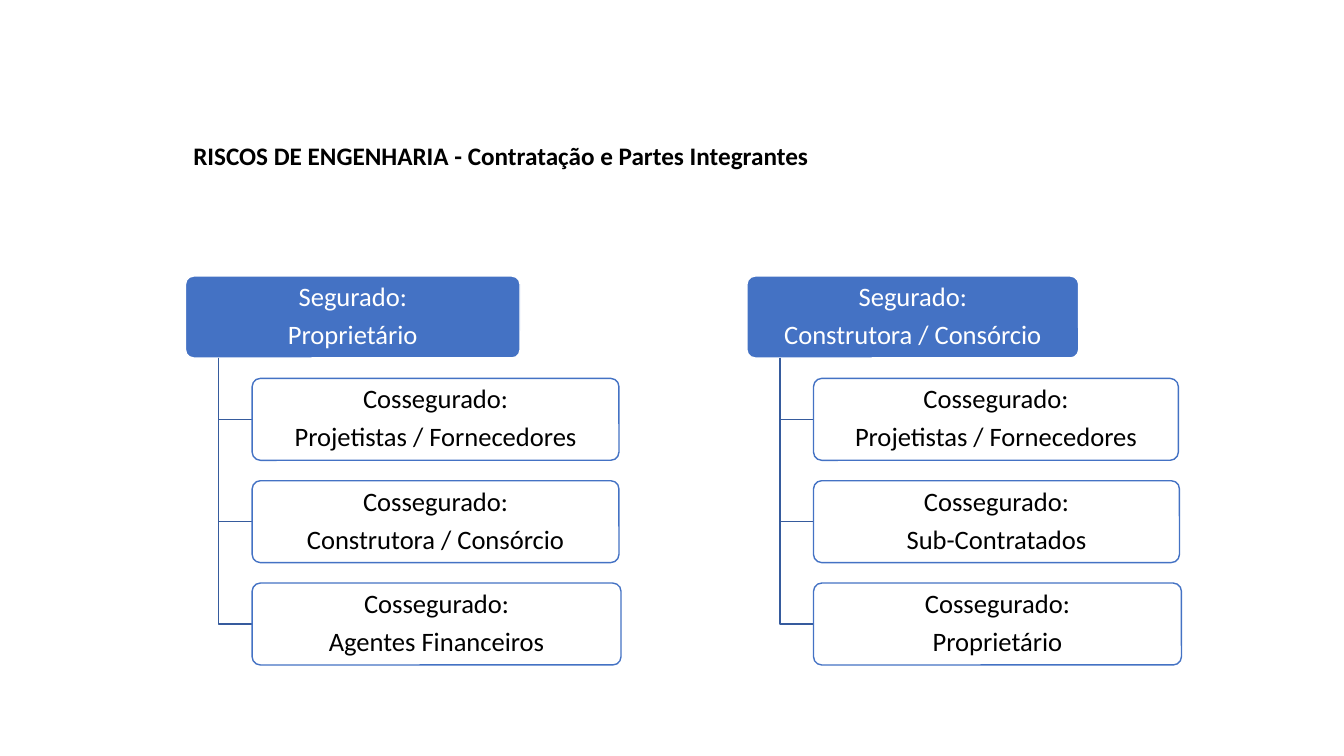
import pptx
import pptx.dml.color
import pptx.enum.shapes
import pptx.enum.text
import pptx.util

Pt = pptx.util.Pt
ALIGN = pptx.enum.text.PP_ALIGN
COLORS = {"black": "000000", "white": "FFFFFF", "blue": "4472C4", "navy": "365B9D"}
BOX_HEIGHT = 58.5
ROW_STEP = 73.1
INDENT = 23.8
TREE_TOP = 197.2

TREES = [
    (533.5, [
        (237, "Segurado:", "Construtora / Consórcio"),
        (260.6, "Cossegurado:", "Projetistas / Fornecedores"),
        (261.4, "Cossegurado:", "Sub-Contratados"),
        (262.8, "Cossegurado:", "Proprietário"),
    ]),
    (132.5, [
        (239, "Segurado:", "Proprietário"),
        (262, "Cossegurado:", "Projetistas / Fornecedores"),
        (262, "Cossegurado:", "Construtora / Consórcio"),
        (263.5, "Cossegurado:", "Agentes Financeiros"),
    ]),
]


class SlideBuilder:
    """Holds the style and the current slide, and draws each kind of element."""

    def __init__(self, slide):
        self.shapes = slide.shapes
        self.font = "Calibri"

    def color(self, name):
        return pptx.dml.color.RGBColor.from_string(COLORS[name])

    def apply(self, target, values):
        for name, value in values.items():
            setattr(target, name, value)

    def outline(self, shape, color):
        shape.shadow.inherit = False
        shape.line.color.rgb = self.color(color)
        shape.line.width = Pt(1)

    def add_lines(self, frame, lines, color, font_format, para_format):
        for index, line in enumerate(lines):
            para = frame.paragraphs[0] if index == 0 else frame.add_paragraph()
            self.apply(para, para_format)
            span = para.add_run()
            span.text = line
            self.apply(span.font, {"name": self.font, **font_format})
            span.font.color.rgb = self.color(color)

    def title(self, text, left, top, width, height):
        box = self.shapes.add_textbox(Pt(left), Pt(top), Pt(width), Pt(height))
        self.apply(box.text_frame, {
            "word_wrap": True,
            "auto_size": pptx.enum.text.MSO_AUTO_SIZE.SHAPE_TO_FIT_TEXT,
        })
        self.add_lines(box.text_frame, [text], "black", {"size": Pt(18), "bold": True},
                       {"space_after": Pt(6)})

    def box(self, lines, left, top, width, fill, line, text):
        box = self.shapes.add_shape(pptx.enum.shapes.MSO_SHAPE.ROUNDED_RECTANGLE,
                                    Pt(left), Pt(top), Pt(width), Pt(BOX_HEIGHT))
        box.adjustments[0] = 0.1
        box.fill.solid()
        box.fill.fore_color.rgb = self.color(fill)
        self.outline(box, line)
        self.apply(box.text_frame, {
            "word_wrap": True,
            "vertical_anchor": pptx.enum.text.MSO_ANCHOR.MIDDLE,
            "margin_left": Pt(4), "margin_right": Pt(4),
            "margin_top": Pt(3), "margin_bottom": Pt(3),
        })
        self.add_lines(box.text_frame, lines, text, {"size": Pt(19)}, {
            "alignment": ALIGN.CENTER, "line_spacing": 0.9, "space_after": Pt(6.65),
        })

    def branch(self, left, top, right, bottom):
        builder = self.shapes.build_freeform(Pt(left), Pt(top))
        builder.add_line_segments([(Pt(left), Pt(bottom)), (Pt(right), Pt(bottom))],
                                  close=False)
        branch = builder.convert_to_shape()
        branch.fill.background()
        self.outline(branch, "navy")

    def tree(self, left, rows):
        trunk, child = left + INDENT, left + 2 * INDENT
        for index, (width, *lines) in enumerate(rows):
            top = TREE_TOP + index * ROW_STEP
            if index == 0:
                self.box(lines, left, top, width, "blue", "white", "white")
            else:
                self.branch(trunk, TREE_TOP + BOX_HEIGHT, child, top + BOX_HEIGHT / 2)
                self.box(lines, child, top, width, "white", "blue", "black")


def main():
    deck = pptx.Presentation()
    deck.slide_width, deck.slide_height = Pt(960), Pt(540)
    page = SlideBuilder(deck.slides.add_slide(deck.slide_layouts[6]))
    page.title("RISCOS DE ENGENHARIA - Contratação e Partes Integrantes",
               131, 96.5, 517.5, 29)
    for left, rows in TREES:
        page.tree(left, rows)
    deck.save("out.pptx")


if __name__ == "__main__":
    main()
